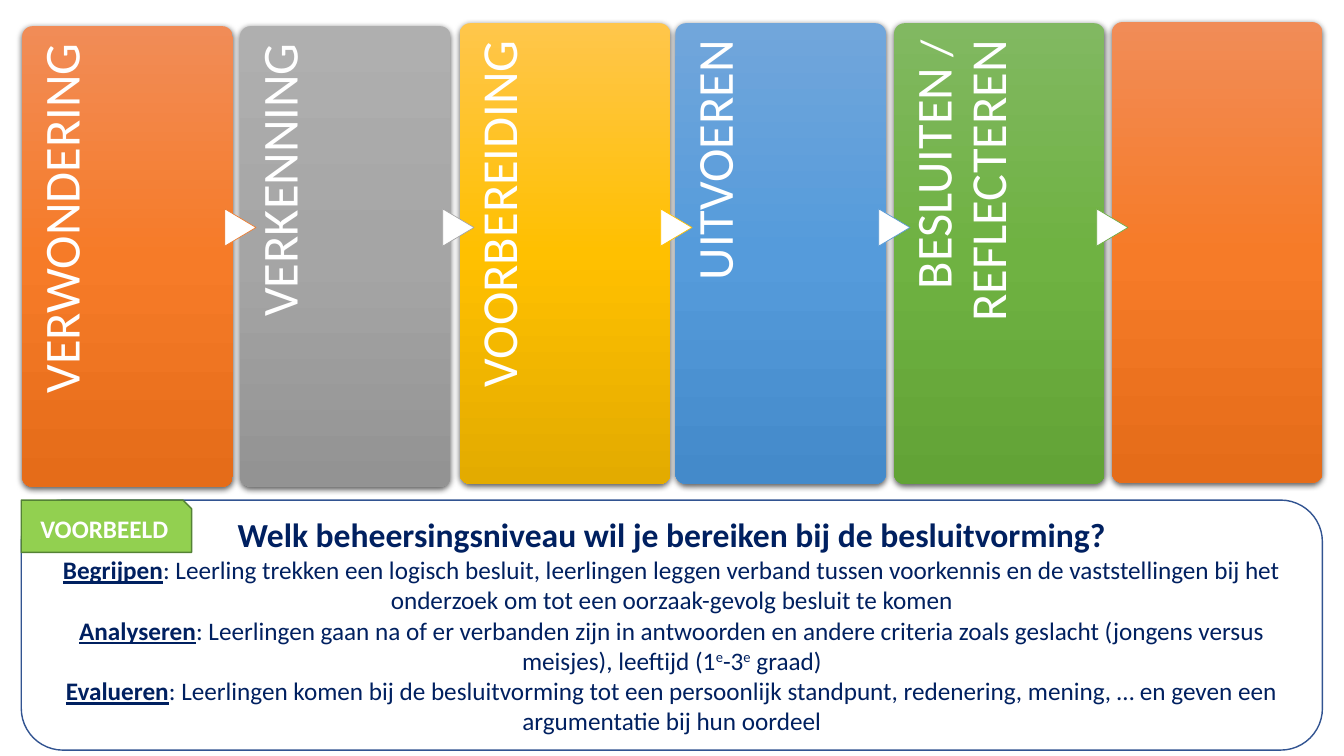
"""Build a slide with six phase cards and an example box on mastery levels."""
from dataclasses import dataclass

from lxml.etree import SubElement
from pptx import Presentation
from pptx.dml.color import RGBColor as Rgb
from pptx.enum.shapes import MSO_SHAPE as Kind
from pptx.enum.text import MSO_ANCHOR as Anchor, PP_ALIGN as Align
from pptx.oxml.ns import qn
from pptx.util import Pt


@dataclass(frozen=True)
class Theme:
    font: str = "Calibri"
    white: str = "FFFFFF"
    navy: str = "002060"
    frame: str = "325491"
    tag: str = "92D050"
    edge: str = "548235"
    orange: tuple = ("F18C57", "F67B28", "E56C19")
    gray: tuple = ("AFAFAF", "A5A5A5", "939393")
    gold: tuple = ("FFC64B", "FFC000", "E3AB00")
    blue: tuple = ("71A6DB", "559BDB", "448ACA")
    green: tuple = ("81B861", "6FB242", "62A336")
    arrows: tuple = ("ED7D31", "A5A5A5", "FFC000", "5B9BD5", "70AD47")
    phase: int = 36
    slash: int = 32
    head: int = 24
    body: int = 18


LOOK = Theme()

CARDS = [
    (15.8, 18.7, LOOK.orange, [("VERWONDERING", LOOK.phase)]),
    (171.4, 18.7, LOOK.gray, [("VERKENNING", LOOK.phase)]),
    (328.3, 16.6, LOOK.gold, [("VOORBEREIDING", LOOK.phase)]),
    (482.4, 16.6, LOOK.blue, [("UITVOEREN", LOOK.phase)]),
    (638.6, 16.6, LOOK.green, [("BESLUITEN", LOOK.phase), (" / ", LOOK.slash),
                               ("REFLECTEREN", LOOK.phase)]),
    (794.2, 15.8, LOOK.orange, []),
]

LEVELS = [
    ("Begrijpen", [": Leerling trekken een logisch besluit, leerlingen leggen verband "
                   "tussen voorkennis en de vaststellingen bij het onderzoek om tot een "
                   "oorzaak-gevolg besluit te komen"]),
    ("Analyseren", [": Leerlingen gaan na of er verbanden zijn in antwoorden en andere "
                    "criteria zoals geslacht (jongens versus meisjes), leeftijd (1",
                    "e", "-3", "e", " graad)"]),
    ("Evalueren", [": Leerlingen komen bij de besluitvorming tot een persoonlijk "
                   "standpunt, redenering, mening, … en geven een argumentatie bij "
                   "hun oordeel"]),
]


def add_run(para, text, size, color, bold=False, under=False, raised=False):
    """Add one formatted run to a paragraph."""
    run = para.add_run()
    run.text = text
    font = run.font
    font.name, font.size = LOOK.font, Pt(size)
    font.bold, font.underline = bold, under
    font.color.rgb = Rgb.from_string(color)
    if raised:
        run._r.get_or_add_rPr().set("baseline", "30000")


def add_form(slide, kind, box, fill=None, line=None, width=1):
    """Add a preset shape with a plain fill and line and no shadow."""
    shape = slide.shapes.add_shape(kind, *map(Pt, box))
    shape.shadow.inherit = False
    if fill:
        shape.fill.solid()
        shape.fill.fore_color.rgb = Rgb.from_string(fill)
    else:
        shape.fill.background()
    if line:
        shape.line.color.rgb = Rgb.from_string(line)
        shape.line.width = Pt(width)
    else:
        shape.line.fill.background()
    return shape


def add_color(node, value):
    """Add a colour element below an XML node."""
    return SubElement(node, qn("a:srgbClr"), val=value)


def add_card(slide, left, top, shades):
    """Add a rounded card with a three-step gradient and a soft shadow."""
    card = add_form(slide, Kind.ROUNDED_RECTANGLE, (left, top, 150.5, 329))
    card.adjustments[0] = 0.05
    card.fill.gradient()
    card.fill.gradient_angle = 270
    props = card._element.spPr
    stops = props.find(".//" + qn("a:gsLst"))
    for stop in list(stops):
        stops.remove(stop)
    for step, shade in enumerate(shades):
        add_color(SubElement(stops, qn("a:gs"), pos=str(step * 50000)), shade)
    glow = SubElement(props.find(qn("a:effectLst")), qn("a:outerShdw"),
                      blurRad=str(Pt(4.5)), dist=str(Pt(1.5)), dir="5400000",
                      algn="ctr", rotWithShape="0")
    SubElement(add_color(glow, "000000"), qn("a:alpha"), val="63000")


def add_phase(slide, left, top, parts):
    """Add a phase name that reads upwards along the left of its card."""
    wide, high = 270, 30.2
    box = slide.shapes.add_textbox(Pt(left + (high - wide) / 2),
                                   Pt(top + (wide - high) / 2), Pt(wide), Pt(high))
    box.rotation = 270
    frame = box.text_frame
    frame.word_wrap = True
    frame.margin_left = frame.margin_bottom = 0
    frame.margin_top, frame.margin_right = Pt(10), Pt(12.2)
    para = frame.paragraphs[0]
    para.alignment, para.line_spacing = Align.RIGHT, 0.9
    for text, size in parts:
        add_run(para, text, size, LOOK.white)


def add_arrow(slide, index):
    """Add the triangle between a card and the next one."""
    box = (158.4 + 155.7 * index, 151.4, 26.6, 22.3)
    arrow = add_form(slide, Kind.FLOWCHART_EXTRACT, box, LOOK.white,
                     LOOK.arrows[index], 0.5)
    arrow.rotation = 90


def add_line(frame, first=False):
    """Return a centred paragraph, the first one or a new one."""
    para = frame.paragraphs[0] if first else frame.add_paragraph()
    para.alignment = Align.CENTER
    return para


def add_levels(slide):
    """Add the framed question with its three levels."""
    box = add_form(slide, Kind.ROUNDED_RECTANGLE, (15.2, 357.2, 929.4, 178.6),
                   line=LOOK.frame)
    frame = box.text_frame
    frame.word_wrap, frame.vertical_anchor = True, Anchor.MIDDLE
    add_run(add_line(frame, True),
            "Welk beheersingsniveau wil je bereiken bij de besluitvorming?",
            LOOK.head, LOOK.navy, bold=True)
    for name, parts in LEVELS:
        para = add_line(frame)
        add_run(para, name, LOOK.body, LOOK.navy, bold=True, under=True)
        for part in parts:
            add_run(para, part, LOOK.body, LOOK.navy, raised=part == "e")


def add_tag(slide):
    """Add the green label at the corner of the frame."""
    tag = add_form(slide, Kind.SNIP_1_RECTANGLE, (15.2, 357.2, 121.7, 37.4),
                   LOOK.tag, LOOK.edge)
    tag.text_frame.vertical_anchor = Anchor.MIDDLE
    add_run(add_line(tag.text_frame, True), "VOORBEELD", LOOK.body, LOOK.white,
            bold=True)


def main():
    """Build and save the slide."""
    deck = Presentation()
    deck.slide_width, deck.slide_height = Pt(960), Pt(540)
    slide = deck.slides.add_slide(deck.slide_layouts[6])
    for index, (left, top, shades, parts) in enumerate(CARDS):
        add_card(slide, left, top, shades)
        if parts:
            add_phase(slide, left, top, parts)
        if index:
            add_arrow(slide, index - 1)
    add_levels(slide)
    add_tag(slide)
    deck.save("out.pptx")


if __name__ == "__main__":
    main()
